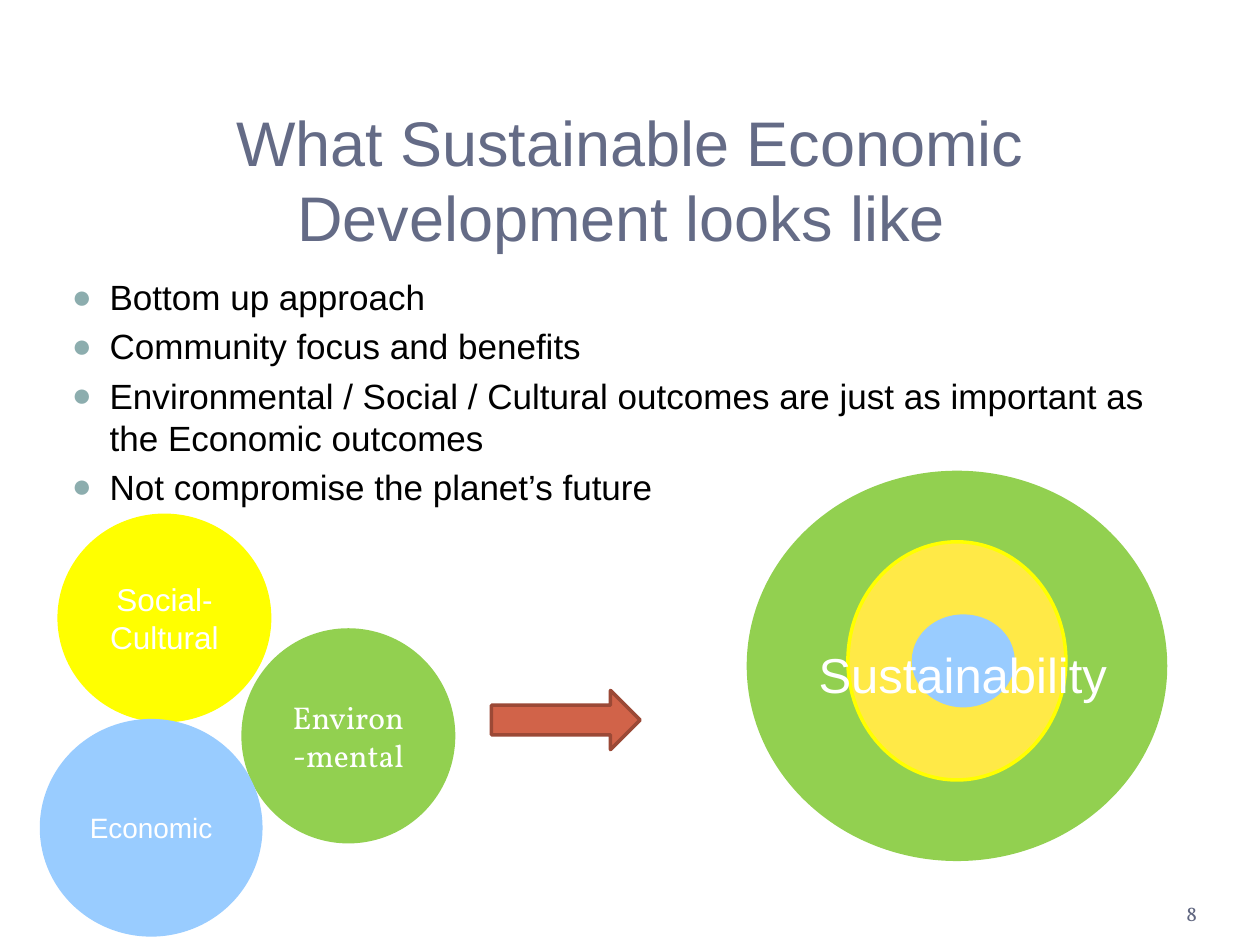
from lxml import etree
from pptx import Presentation
from pptx.dml.color import RGBColor
from pptx.enum.shapes import MSO_SHAPE
from pptx.enum.text import MSO_ANCHOR, MSO_AUTO_SIZE, PP_ALIGN
from pptx.oxml.ns import qn
from pptx.util import Inches, Pt

DISC = MSO_SHAPE.FLOWCHART_CONNECTOR
ARROW = MSO_SHAPE.RIGHT_ARROW
MIDDLE, BOTTOM, TOP = MSO_ANCHOR.MIDDLE, MSO_ANCHOR.BOTTOM, MSO_ANCHOR.TOP
LEFT, CENTER, RIGHT = PP_ALIGN.LEFT, PP_ALIGN.CENTER, PP_ALIGN.RIGHT
FIXED = MSO_AUTO_SIZE.NONE

COLORS = {
    "title": "646B86", "body": "000000", "bullet": "8CADAE", "page": "606680",
    "white": "FFFFFF", "yellow": "FFFF00", "gold": "FFE947", "green": "92D050",
    "blue": "99CCFF", "red": "D16349", "rust": "9B4936",
}
POINTS = [
    "Bottom up approach",
    "Community focus and benefits",
    "Environmental / Social / Cultural outcomes are just as important as "
    "the Economic outcomes",
    "Not compromise the planet’s future",
]


def rgb(name):
    return RGBColor.from_string(COLORS[name])


def place(shape, box):
    shape.left, shape.top, shape.width, shape.height = map(Inches, box)


def set_frame(frame, anchor, margins=(0.1, 0.05, 0.1, 0.05)):
    frame.word_wrap = True
    frame.auto_size = FIXED
    frame.vertical_anchor = anchor
    (frame.margin_left, frame.margin_top,
     frame.margin_right, frame.margin_bottom) = map(Inches, margins)


def add_run(para, text, size, color, align=CENTER, face="Arial"):
    para.alignment = align
    run = para.add_run()
    run.text = text
    run.font.size = Pt(size)
    run.font.name = face
    run.font.color.rgb = rgb(color)


def add_bullet(para):
    props = para._p.get_or_add_pPr()
    props.set("marL", str(Inches(0.3)))
    props.set("indent", str(Inches(-0.3)))
    tint = etree.SubElement(props, qn("a:buClr"))
    etree.SubElement(tint, qn("a:srgbClr"), val=COLORS["bullet"])
    etree.SubElement(props, qn("a:buSzPct"), val="95000")
    etree.SubElement(props, qn("a:buFont"), typeface="Arial")
    etree.SubElement(props, qn("a:buChar"), char="●")


def add_shape(slide, kind, box, fill, line):
    shape = slide.shapes.add_shape(kind, *map(Inches, box))
    shape.shadow.inherit = False
    shape.fill.solid()
    shape.fill.fore_color.rgb = rgb(fill)
    shape.line.color.rgb = rgb(line)
    shape.line.width = Pt(2)
    return shape


def add_label(slide, box, text, size, color, align=CENTER, face="Arial",
              anchor=TOP, margins=(0.1, 0.05, 0.1, 0.05)):
    frame = slide.shapes.add_textbox(*map(Inches, box)).text_frame
    set_frame(frame, anchor, margins)
    add_run(frame.paragraphs[0], text, size, color, align, face)


def fill_title(slide, box):
    title = slide.shapes.title
    place(title, box)
    set_frame(title.text_frame, BOTTOM, (0, 0.05, 0, 0))
    add_run(title.text_frame.paragraphs[0],
            "What Sustainable Economic Development looks like ", 36, "title")


def fill_body(slide, box):
    body = slide.placeholders[1]
    place(body, box)
    frame = body.text_frame
    set_frame(frame, TOP)
    for i, point in enumerate(POINTS):
        para = frame.add_paragraph() if i else frame.paragraphs[0]
        add_bullet(para)
        para.space_before = Pt(4 if i else 0)
        add_run(para, point, 20, "body", LEFT)


def add_trio(slide, box):
    left, top = box[:2]
    discs = [
        ((0.14, 0, 1.67, 1.63), "yellow", "Social-Cultural", 18, "Arial"),
        ((1.6, 0.91, 1.67, 1.68), "green", "Environ-mental", 18, "Vollkorn"),
        ((0, 1.63, 1.74, 1.7), "blue", "Economic ", 16, "Arial"),
    ]
    for (x, y, w, h), color, text, size, face in discs:
        disc = add_shape(slide, DISC, (left + x, top + y, w, h), color, color)
        set_frame(disc.text_frame, MIDDLE)
        add_run(disc.text_frame.paragraphs[0], text, size, "white", face=face)


def add_rings(slide, box):
    left, top, width, height = box
    rings = [
        ((0, 0, width, height), "green", "green"),
        ((0.79, 0.55, 1.73, 1.89), "gold", "yellow"),
        ((1.31, 1.14, 0.79, 0.71), "blue", "blue"),
    ]
    for (x, y, w, h), fill, line in rings:
        add_shape(slide, DISC, (left + x, top + y, w, h), fill, line)
    add_label(slide, (left + 0.21, top + 1.32, 2.98, 0.57),
              "Sustainability", 28, "white")


def main():
    deck = Presentation()
    deck.slide_width, deck.slide_height = Inches(10), Inches(7.5)
    slide = deck.slides.add_slide(deck.slide_layouts[1])
    fill_title(slide, (0.5, 0.77, 9, 1.25))
    fill_body(slide, (0.47, 2.14, 9, 4.8))
    add_label(slide, (8.67, 6.95, 0.83, 0.4), "8", 12, "page", RIGHT,
              "Vollkorn", BOTTOM, (0, 0, 0, 0))
    add_trio(slide, (0.33, 4.09, 3.27, 3.33))
    add_shape(slide, ARROW, (3.9, 5.48, 1.18, 0.47), "red", "rust")
    add_rings(slide, (5.94, 3.75, 3.31, 3.07))
    deck.save("out.pptx")


if __name__ == "__main__":
    main()
